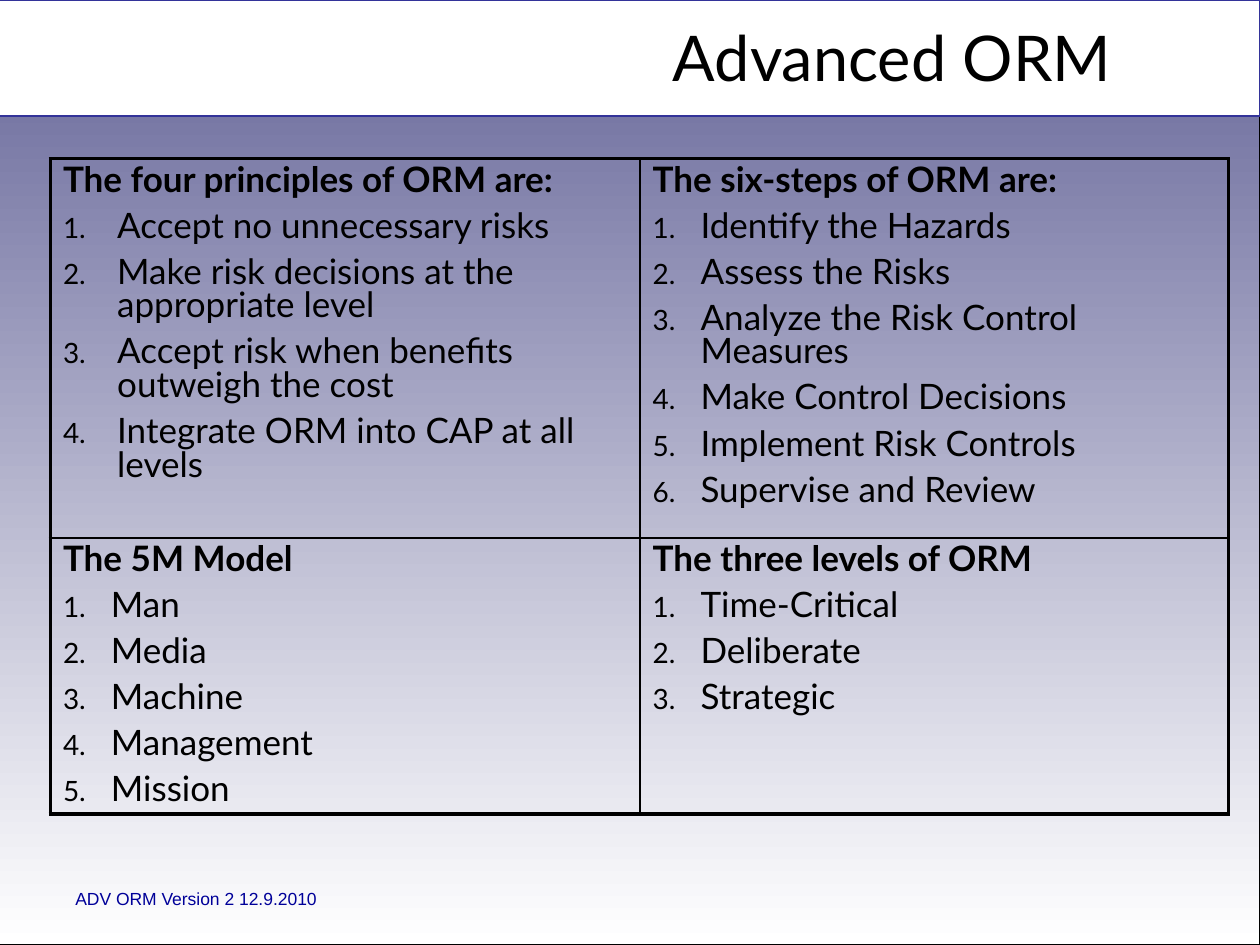
from dataclasses import dataclass
from lxml import etree
from pptx import Presentation
from pptx.dml.color import RGBColor
from pptx.enum.shapes import MSO_SHAPE
from pptx.enum.text import MSO_ANCHOR, PP_ALIGN
from pptx.oxml.ns import qn
from pptx.util import Inches, Pt

RECT = MSO_SHAPE.RECTANGLE
MIDDLE = MSO_ANCHOR.MIDDLE
LEFT, CENTER = PP_ALIGN.LEFT, PP_ALIGN.CENTER

TITLE = "Advanced ORM"
FOOTER = "ADV ORM Version 2 12.9.2010"
CELLS = [
    [
        ("The four principles of ORM are:", 0.43, [
            "Accept no unnecessary risks",
            "Make risk decisions at the appropriate level",
            "Accept risk when benefits outweigh the cost",
            "Integrate ORM into CAP at all levels",
        ]),
        ("The six-steps of ORM are:", 0.38, [
            "Identify the Hazards",
            "Assess the Risks",
            "Analyze the Risk Control Measures",
            "Make Control Decisions",
            "Implement Risk Controls",
            "Supervise and Review",
        ]),
    ],
    [
        ("The 5M Model", 0.38,
         ["Man", "Media", "Machine", "Management", "Mission"]),
        ("The three levels of ORM", 0.38,
         ["Time-Critical", "Deliberate", "Strategic"]),
    ],
]


@dataclass(frozen=True)
class Theme:
    black: str = "000000"
    white: str = "FFFFFF"
    slate: str = "666699"
    blue: str = "333399"
    navy: str = "000099"
    font: str = "Lato"
    plain: str = "Arial"
    head: int = 36
    body: int = 20
    foot: int = 10
    thick: float = 2.25
    thin: float = 1
    edge: float = 0.75


T = Theme()
WIDE, HIGH = 10, 7.5
BLEED = 0.12
BAND = 0.92
GRID = (0.4, 1.26)
COLS = (4.68, 4.67)
ROWS = (3.01, 2.19)


def rgb(code):
    return RGBColor.from_string(code)


def add_run(para, text, size, font=T.font, color=T.black, bold=False):
    run = para.add_run()
    run.text = text
    run.font.size = Pt(size)
    run.font.name = font
    run.font.bold = bold
    run.font.color.rgb = rgb(color)


def add_panel(slide, height, line):
    box = slide.shapes.add_shape(
        RECT, Inches(-BLEED), 0, Inches(WIDE + BLEED), Inches(height))
    box.shadow.inherit = False
    box.line.color.rgb = rgb(line)
    box.line.width = Pt(T.edge)
    return box.fill


def add_label(slide, area, text, align, *style):
    frame = slide.shapes.add_textbox(*map(Inches, area)).text_frame
    frame.word_wrap = True
    frame.vertical_anchor = MIDDLE
    para = frame.paragraphs[0]
    para.alignment = align
    add_run(para, text, *style)


def add_sub(parent, tag, **attrs):
    return etree.SubElement(parent, qn(tag), attrs)


def set_number(para, indent):
    props = para._p.get_or_add_pPr()
    props.set("marL", str(Inches(indent)))
    props.set("indent", str(-Inches(indent)))
    add_sub(add_sub(props, "a:buClr"), "a:srgbClr", val=T.black)
    add_sub(props, "a:buSzPct", val="80000")
    add_sub(props, "a:buFont", typeface="+mj-lt")
    add_sub(props, "a:buAutoNum", type="arabicPeriod")


def set_edges(cell, row, col):
    outer = {"L": col == 0, "R": col == len(COLS) - 1,
             "T": row == 0, "B": row == len(ROWS) - 1}
    props = cell._tc.get_or_add_tcPr()
    for side, bold in outer.items():
        width = Pt(T.thick if bold else T.thin)
        line = add_sub(props, "a:ln" + side, w=str(width))
        add_sub(add_sub(line, "a:solidFill"), "a:srgbClr", val=T.black)


def fill_cell(cell, head, indent, items):
    frame = cell.text_frame
    para = frame.paragraphs[0]
    para.line_spacing = 0.8
    add_run(para, head, T.body, bold=True)
    for item in items:
        para = frame.add_paragraph()
        set_number(para, indent)
        para.line_spacing = 0.8
        para.space_before = Pt(0.35 * T.body)
        add_run(para, item, T.body)


def add_grid(slide):
    area = (*GRID, sum(COLS), sum(ROWS))
    table = slide.shapes.add_table(
        len(ROWS), len(COLS), *map(Inches, area)).table
    table.first_row = table.horz_banding = False
    for col, width in zip(table.columns, COLS):
        col.width = Inches(width)
    for r, (row, height) in enumerate(zip(table.rows, ROWS)):
        row.height = Inches(height)
        for c, cell in enumerate(row.cells):
            set_edges(cell, r, c)
            cell.fill.background()
            fill_cell(cell, *CELLS[r][c])


def main():
    deck = Presentation()
    deck.slide_width, deck.slide_height = Inches(WIDE), Inches(HIGH)
    slide = deck.slides.add_slide(deck.slide_layouts[6])

    back = add_panel(slide, HIGH, T.black)
    back.gradient()
    back.gradient_angle = 270
    for stop, color, place in zip(
            back.gradient_stops, (T.slate, T.white), (0, 1)):
        stop.color.rgb = rgb(color)
        stop.position = place
    band = add_panel(slide, BAND, T.blue)
    band.solid()
    band.fore_color.rgb = rgb(T.white)

    add_label(slide, (4.16, 0.16, 5.84, 0.57), TITLE, CENTER, T.head)
    add_label(slide, (0.5, 7, 8, 0.27), FOOTER, LEFT,
              T.foot, T.plain, T.navy)
    add_grid(slide)
    deck.save("out.pptx")


if __name__ == "__main__":
    main()
